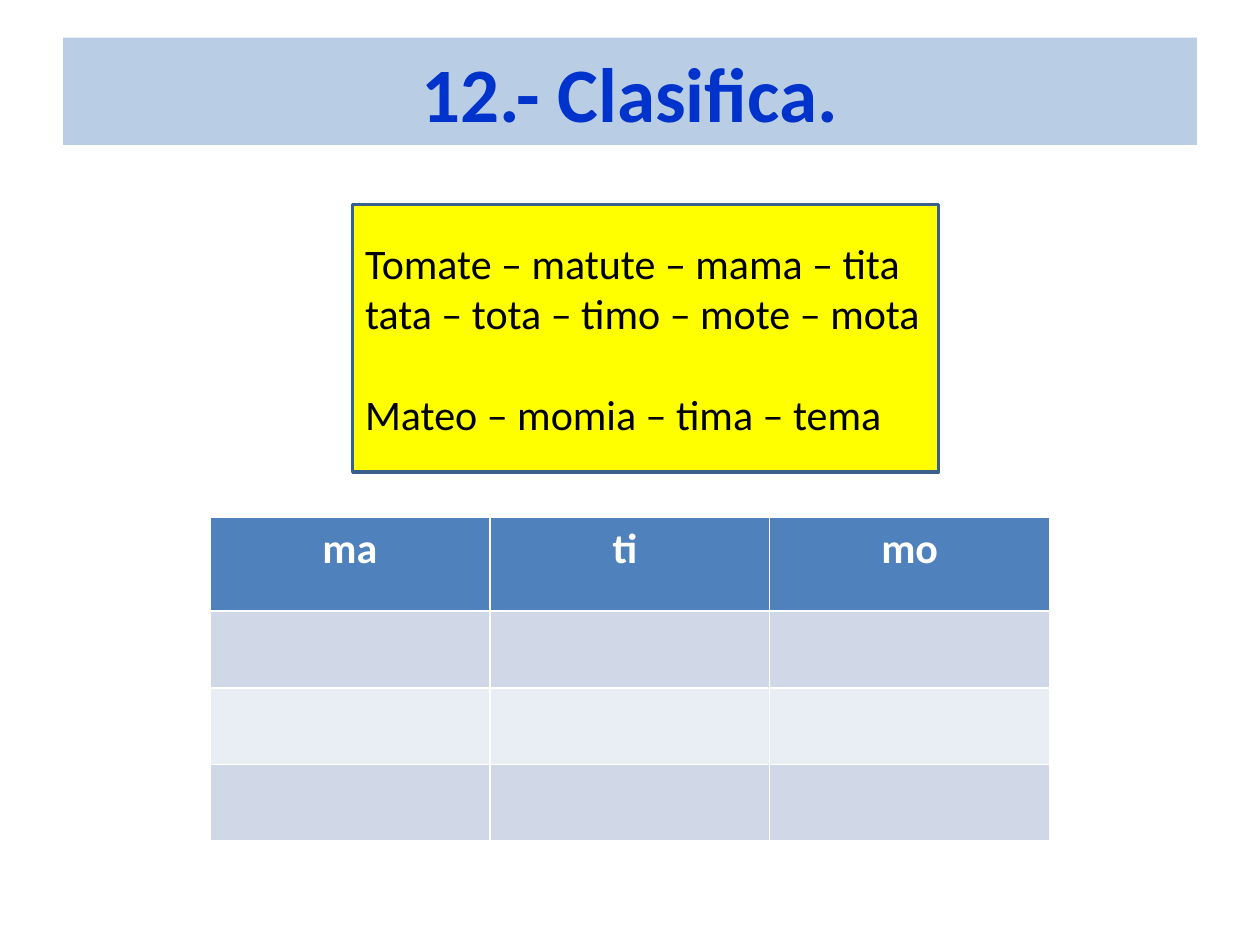
from dataclasses import dataclass

from pptx import Presentation
from pptx.dml.color import RGBColor
from pptx.enum.shapes import MSO_SHAPE
from pptx.enum.text import MSO_ANCHOR, MSO_AUTO_SIZE, PP_ALIGN
from pptx.util import Cm, Pt


@dataclass(frozen=True)
class Theme:
    font: str = "Calibri"
    band: str = "B9CDE5"
    title: str = "0033CC"
    card: str = "FFFF00"
    edge: str = "3A5F8C"
    ink: str = "000000"
    head: str = "4F81BD"
    light: str = "FFFFFF"
    rows: tuple[str, str] = ("D0D8E8", "E9EDF4")
    large: int = 44
    body: int = 24


@dataclass(frozen=True)
class Box:
    left: float
    top: float
    width: float
    height: float

    def place(self) -> tuple[Cm, Cm, Cm, Cm]:
        return Cm(self.left), Cm(self.top), Cm(self.width), Cm(self.height)


THEME = Theme()
TITLE = Box(1.27, 0.76, 22.86, 2.16)
CARD = Box(7.11, 4.12, 11.81, 5.4)
GRID = Box(4.23, 10.42, 16.93, 6.54)
HEAD_ROW = 1.9
BLANK_ROWS = 3
WORDS = (
    "Tomate – matute – mama – tita",
    "tata – tota – timo – mote – mota",
    "Mateo – momia – tima – tema",
)
HEADS = ("ma", "ti ", "mo")


def paint(part, color: str) -> None:
    part.fill.solid()
    part.fill.fore_color.rgb = RGBColor.from_string(color)


def style(frame, align, size: int, color: str, bold: bool = False) -> None:
    for para in frame.paragraphs:
        para.alignment = align
        for run in para.runs:
            font = run.font
            font.name, font.size, font.bold = THEME.font, Pt(size), bold
            font.color.rgb = RGBColor.from_string(color)


def add_title(slide) -> None:
    title = slide.shapes.title
    title.left, title.top, title.width, title.height = TITLE.place()
    paint(title, THEME.band)
    frame = title.text_frame
    frame.text = "12.- Clasifica."
    frame.auto_size = MSO_AUTO_SIZE.NONE
    frame.vertical_anchor = MSO_ANCHOR.MIDDLE
    style(frame, PP_ALIGN.CENTER, THEME.large, THEME.title, True)


def add_words(slide) -> None:
    card = slide.shapes.add_shape(MSO_SHAPE.RECTANGLE, *CARD.place())
    card.shadow.inherit = False
    paint(card, THEME.card)
    card.line.color.rgb = RGBColor.from_string(THEME.edge)
    card.line.width = Pt(2)
    frame = card.text_frame
    frame.text = "\n".join(WORDS)
    frame.word_wrap = True
    frame.margin_right = 0
    frame.vertical_anchor = MSO_ANCHOR.MIDDLE
    style(frame, PP_ALIGN.JUSTIFY, THEME.body, THEME.ink)
    frame.paragraphs[-1].space_before = Pt(29)


def add_grid(slide) -> None:
    shape = slide.shapes.add_table(BLANK_ROWS + 1, len(HEADS), *GRID.place())
    table = shape.table
    for index, row in enumerate(table.rows):
        blank = (GRID.height - HEAD_ROW) / BLANK_ROWS
        row.height = Cm(blank if index else HEAD_ROW)
        fill = THEME.rows[(index - 1) % 2] if index else THEME.head
        for cell in row.cells:
            paint(cell, fill)
    for cell, text in zip(table.rows[0].cells, HEADS):
        cell.text_frame.text = text
        style(cell.text_frame, PP_ALIGN.CENTER, THEME.body, THEME.light, True)


def main() -> None:
    deck = Presentation()
    deck.slide_width, deck.slide_height = Cm(25.4), Cm(19.05)
    slide = deck.slides.add_slide(deck.slide_layouts[5])
    add_title(slide)
    add_words(slide)
    add_grid(slide)
    deck.save("out.pptx")


if __name__ == "__main__":
    main()
